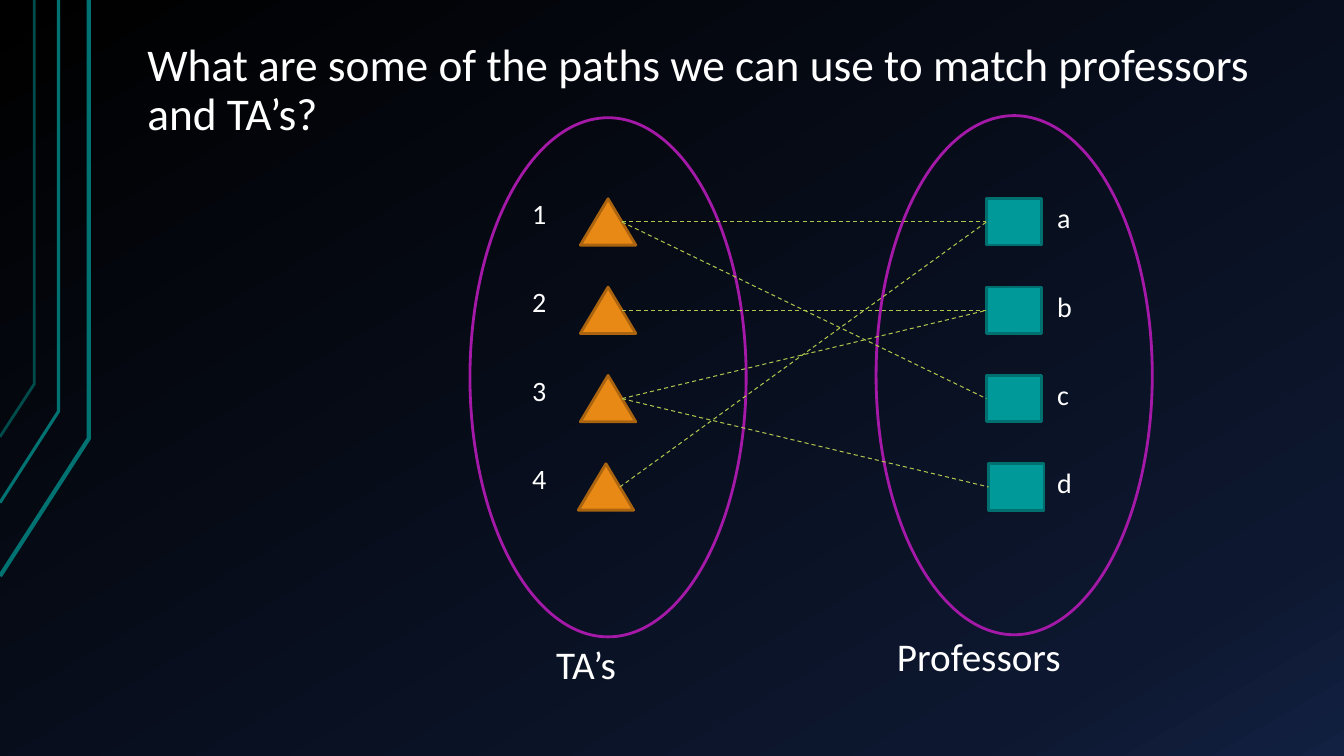
from copy import deepcopy

from lxml.etree import SubElement
from pptx import Presentation
from pptx.dml.color import RGBColor
from pptx.enum.dml import MSO_LINE
from pptx.enum.shapes import MSO_CONNECTOR, MSO_SHAPE
from pptx.enum.text import MSO_ANCHOR, MSO_AUTO_SIZE, PP_ALIGN
from pptx.oxml.ns import qn
from pptx.util import Pt

ROW_PITCH = 63.1
MEMBER_WIDTH, MEMBER_HEIGHT = 39.6, 33.1
MATCHES = [("1", "a"), ("2", "b"), ("3", "b"), ("3", "d"), ("4", "a"), ("1", "c")]


def color(value):
    return RGBColor.from_string(value)


def set_line(line, value, width):
    line.color.rgb = color(value)
    line.width = Pt(width)


def add_span(para, text, size):
    span = para.add_run()
    span.text = text
    span.font.name = "Calibri"
    span.font.size = Pt(size)
    span.font.color.rgb = color("FFFFFF")


def add_label(page, text, size, left, top, width, height):
    box = page.shapes.add_textbox(Pt(left), Pt(top), Pt(width), Pt(height))
    box.text_frame.word_wrap = True
    add_span(box.text_frame.paragraphs[0], text, size)


def add_figure(page, kind, left, top, width, height, fill, line, weight=2):
    shape = page.shapes.add_shape(kind, Pt(left), Pt(top), Pt(width), Pt(height))
    shape.shadow.inherit = False
    if fill:
        shape.fill.solid()
        shape.fill.fore_color.rgb = color(fill)
    else:
        shape.fill.background()
    set_line(shape.line, line, weight)
    return shape


def paint_background(page):
    fill = page.background.fill
    fill.gradient()
    fill.gradient_angle = 300
    stop_list = page.element.xpath(".//a:gsLst")[0]
    stop_list.append(deepcopy(stop_list[-1]))
    stops = [(0, "000000"), (0.85, "0D172F"), (1, "122041")]
    for stop, (position, value) in zip(fill.gradient_stops, stops):
        stop.position = position
        stop.color.rgb = color(value)


def add_rails(page):
    rails = [
        (63.4, 313.2, 411.5, "007272", 3),
        (41.8, 293.8, 359, "007272", 2.25),
        (24.5, 274.3, 312, "004C4C", 2),
    ]
    for right, bend, bottom, value, weight in rails:
        builder = page.shapes.build_freeform(Pt(0), Pt(bottom))
        builder.add_line_segments(
            [(Pt(right), Pt(bend)), (Pt(right), Pt(0))], close=False
        )
        rail = builder.convert_to_shape()
        rail.shadow.inherit = False
        rail.fill.background()
        set_line(rail.line, value, weight)


def add_title(page, left, top, width, height):
    title = page.shapes.title
    title.left, title.top = Pt(left), Pt(top)
    title.width, title.height = Pt(width), Pt(height)
    frame = title.text_frame
    frame.word_wrap = True
    frame.auto_size = MSO_AUTO_SIZE.NONE
    frame.vertical_anchor = MSO_ANCHOR.BOTTOM
    frame.margin_left = frame.margin_right = Pt(9.4)
    frame.margin_top = frame.margin_bottom = Pt(5)
    para = frame.paragraphs[0]
    para.alignment = PP_ALIGN.LEFT
    para.line_spacing = 0.9
    add_span(
        para,
        "What are some of the paths we can use to match professors and TA’s?",
        32.4,
    )


def add_set(page, left, top, names, kind, fill, line, first_row, last_shift,
            label_left, label_rise, caption, caption_box):
    width, height = 197.3, 370.8
    members = {}
    for row, name in enumerate(names):
        shift = last_shift if row == len(names) - 1 else 0
        member_top = top + first_row + row * ROW_PITCH
        members[name] = add_figure(
            page, kind, left + (width - MEMBER_WIDTH) / 2 + shift, member_top,
            MEMBER_WIDTH, MEMBER_HEIGHT, fill, line,
        )
        add_label(page, name, 20, left + label_left, member_top - label_rise, 47.5, 43.2)
    add_figure(page, MSO_SHAPE.OVAL, left, top, width, height, None, "A419A7")
    caption_left, caption_top, caption_width = caption_box
    add_label(page, caption, 28, left + caption_left, top + caption_top,
              caption_width, 56.9)
    return members


def add_matches(page, assistants, professors):
    for number, letter in MATCHES:
        triangle, square = assistants[number], professors[letter]
        start_x = triangle.left + triangle.width * 3 // 4
        start_y = triangle.top + triangle.height // 2
        link = page.shapes.add_connector(
            MSO_CONNECTOR.STRAIGHT, start_x, start_y, square.left, start_y
        )
        link.end_connect(square, 1)
        set_line(link.line, "AFC34D", 0.75)
        link.line.dash_style = MSO_LINE.DASH
        SubElement(link.element.spPr, qn("a:effectLst"))


def build_matching_slide(deck):
    page = deck.slides.add_slide(deck.slide_layouts[5])
    paint_background(page)
    add_rails(page)
    add_title(page, 95.8, 21.6, 815.8, 83.5)
    assistants = add_set(
        page, 335.7, 84.1, "1234", MSO_SHAPE.ISOSCELES_TRIANGLE, "E98915", "AA630F",
        57.9, -1.5, 37.3, 5.2, "TA’s", (54.5, 369.5, 98.6),
    )
    professors = add_set(
        page, 625.8, 82.6, "abcd", MSO_SHAPE.RECTANGLE, "009999", "006F6F",
        59.4, 1.5, 122.3, 2, "Professors", (7.8, 365.2, 226.8),
    )
    add_matches(page, assistants, professors)


def main():
    deck = Presentation()
    deck.slide_width, deck.slide_height = Pt(960), Pt(540)
    build_matching_slide(deck)
    deck.save("out.pptx")


if __name__ == "__main__":
    main()
